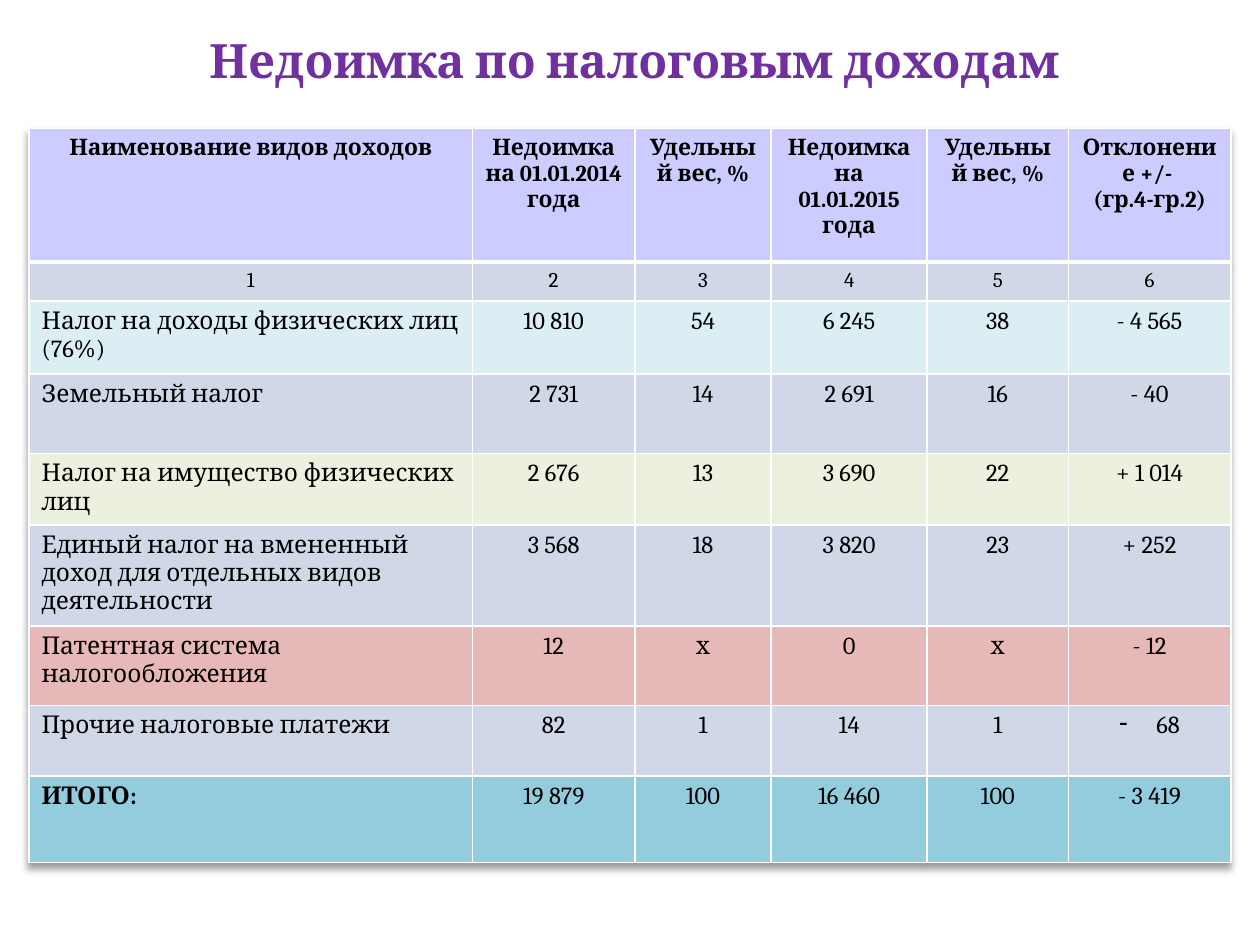
from dataclasses import dataclass

from lxml import etree
from pptx import Presentation
from pptx.dml.color import RGBColor
from pptx.enum import text
from pptx.oxml import ns
from pptx.util import Inches, Pt


@dataclass(frozen=True)
class Theme:
    font: str = "Cambria"
    title: str = "7030A0"
    ink: str = "000000"
    rule: str = "FFFFFF"
    header: str = "CCCCFF"
    band: str = "D0D8E8"
    income: str = "DBEEF4"
    property: str = "EBF1DE"
    patent: str = "E6B9B8"
    total: str = "93CDDD"
    title_size: int = 27
    header_size: int = 13
    number_size: int = 12
    body_size: int = 14


T = Theme()
CENTER, LEFT = text.PP_ALIGN.CENTER, text.PP_ALIGN.LEFT

COLUMNS = [3.52, 1.29, 1.08, 1.24, 1.12, 1.29]
HEADER = ["Наименование видов доходов", "Недоимка на 01.01.2014 года",
          "Удельный вес, %", "Недоимка на 01.01.2015 года",
          "Удельный вес, %", "Отклонение +/- \n(гр.4-гр.2)"]
# Height, fill and cell texts of each tax row
TAXES = [
    (0.58, T.income, ["Налог на доходы физических лиц (76%)",
                      "10 810", "54", "6 245", "38", "- 4 565"]),
    (0.63, T.band, ["Земельный налог", "2 731", "14", "2 691", "16", "- 40"]),
    (0.55, T.property, ["Налог на имущество физических лиц",
                        "2 676", "13", "3 690", "22", "+ 1 014"]),
    (0.61, T.band, ["Единый налог на вмененный доход для отдельных видов деятельности",
                    "3 568", "18", "3 820", "23", "+ 252"]),
    (0.63, T.patent, ["Патентная система налогообложения", "12", "х", "0", "х", "- 12"]),
    (0.56, T.band, ["Прочие налоговые платежи", "82", "1", "14", "1", " 68"]),
    (0.69, T.total, ["ИТОГО:", "19 879", "100", "16 460", "100", "- 3 419"]),
]
DASHED_ROW = 7  # its last cell carries the minus as a bullet


def add_xml(parent, tag, **attrs):
    return etree.SubElement(parent, ns.qn(tag), attrs)


def write(tf, content, size, color=T.ink, bold=False, align=CENTER, bullet=None):
    """Fill a text frame, one paragraph for each line of content."""
    tf.word_wrap = True
    for i, line in enumerate(content.split("\n")):
        p = tf.paragraphs[0] if i == 0 else tf.add_paragraph()
        p.alignment = align
        if bullet:
            pPr = p._p.get_or_add_pPr()
            pPr.set("marL", str(Inches(0.25)))
            pPr.set("indent", str(-Inches(0.25)))
            add_xml(pPr, "a:buFontTx")
            add_xml(pPr, "a:buChar", char=bullet)
        r = p.add_run()
        r.text = line
        r.font.name, r.font.size, r.font.bold = T.font, Pt(size), bold
        r.font.color.rgb = RGBColor.from_string(color)


def style_cell(cell, fill, bottom=1, top=1):
    """Paint a cell and rule its four sides; widths in points."""
    tcPr = cell._tc.get_or_add_tcPr()
    for side, width in (("L", 1), ("R", 1), ("T", top), ("B", bottom)):
        ln = add_xml(tcPr, f"a:ln{side}", w=str(Pt(width)))
        add_xml(add_xml(ln, "a:solidFill"), "a:srgbClr", val=T.rule)
    cell.fill.solid()
    cell.fill.fore_color.rgb = RGBColor.from_string(fill)


def add_table_shadow(table):
    effects = etree.Element(ns.qn("a:effectLst"))
    shadow = add_xml(effects, "a:outerShdw", blurRad=str(Pt(4)), dist=str(Pt(3)),
                     dir="5400000", algn="t", rotWithShape="0")
    color = add_xml(shadow, "a:prstClr", val="black")
    add_xml(color, "a:alpha", val="40000")
    table._tbl.tblPr.insert(0, effects)


def add_title(s, x, y, w, h):
    tf = s.shapes.add_textbox(Inches(x), Inches(y), Inches(w), Inches(h)).text_frame
    tf.vertical_anchor = text.MSO_ANCHOR.MIDDLE
    write(tf, "Недоимка по налоговым доходам", T.title_size, T.title, bold=True)


def add_arrears_table(s, x, y, w, h):
    numbers = [str(n) for n in range(1, len(COLUMNS) + 1)]
    rows = [(1.06, T.header, HEADER), (0.31, T.band, numbers), *TAXES]
    table = s.shapes.add_table(len(rows), len(COLUMNS), Inches(x), Inches(y),
                               Inches(w), Inches(h)).table
    add_table_shadow(table)
    for column, width in zip(table.columns, COLUMNS):
        column.width = Inches(width)
    sizes = {0: T.header_size, 1: T.number_size}
    for i, (height, fill, values) in enumerate(rows):
        table.rows[i].height = Inches(height)
        for j, value in enumerate(values):
            cell = table.cell(i, j)
            style_cell(cell, fill, bottom=3 if i == 0 else 1, top=3 if i == 1 else 1)
            write(cell.text_frame, value, sizes.get(i, T.body_size),
                  bold=i == 0 or (i == len(rows) - 1 and j == 0),
                  align=LEFT if i > 1 and j == 0 else CENTER,
                  bullet="-" if (i, j) == (DASHED_ROW, len(COLUMNS) - 1) else None)


def main():
    prs = Presentation()
    prs.slide_width, prs.slide_height = Inches(10), Inches(7.5)
    s = prs.slides.add_slide(prs.slide_layouts[6])
    add_title(s, 0.31, 0.16, 9.45, 0.62)
    add_arrears_table(s, 0.23, 1.02, 9.53, 5.63)
    prs.save("out.pptx")


if __name__ == "__main__":
    main()
